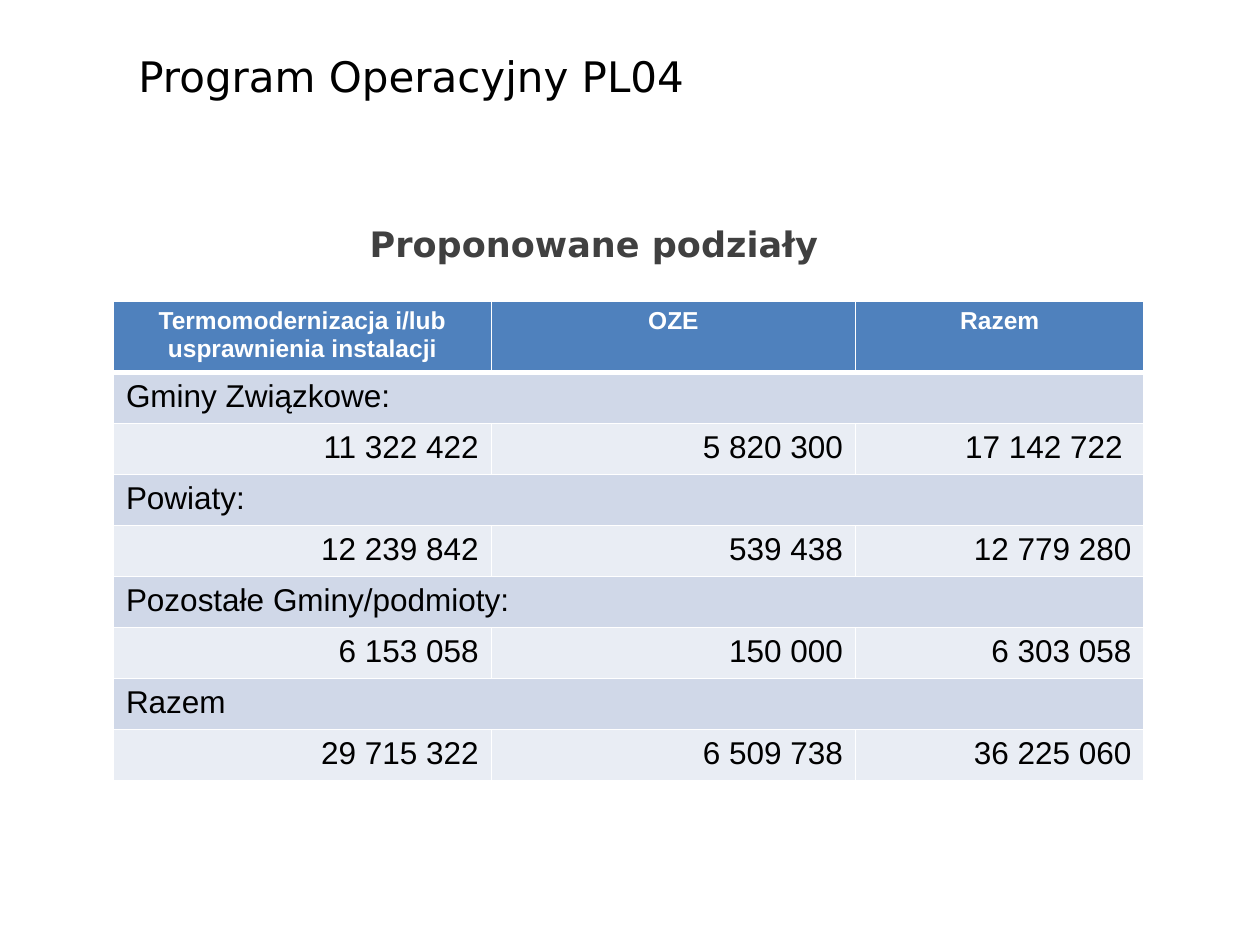
from lxml.etree import SubElement
from pptx import Presentation
from pptx.dml.color import RGBColor
from pptx.enum.text import PP_ALIGN as AL
from pptx.oxml.ns import qn
from pptx.util import Inches, Pt

W, H = 10, 7.5
HEAD, LABEL, VALUE = "4F81BD", "D0D8E8", "E9EDF4"
BLACK, GREY, WHITE = "000000", "404040", "FFFFFF"
COLS = [3, 2.89, 2.29]
HEAD_H, ROW_H = 0.56, 0.405
HEADERS = ["Termomodernizacja i/lub usprawnienia instalacji", "OZE", "Razem"]
GROUPS = [
    ("Gminy Związkowe:", ["11 322 422", "5 820 300", "17 142 722 "]),
    ("Powiaty:", ["12 239 842", "539 438", "12 779 280"]),
    ("Pozostałe Gminy/podmioty:", ["6 153 058", "150 000", "6 303 058"]),
    ("Razem", ["29 715 322", "6 509 738", "36 225 060"]),
]


def rgb(color):
    return RGBColor.from_string(color)


def write(tf, text, size, color, font="Arial", bold=False, align=AL.LEFT):
    p = tf.paragraphs[0]
    p.alignment = align
    r = p.add_run()
    r.text = text
    r.font.name, r.font.size, r.font.bold = font, Pt(size), bold
    r.font.color.rgb = rgb(color)
    return p


def add_heading(slide, box, text, size, color, **style):
    sp = slide.shapes.add_textbox(*map(Inches, box))
    sp.text_frame.word_wrap = True
    return write(sp.text_frame, text, size, color, font="DejaVu Sans", **style)


def add_title(slide, box):
    p = add_heading(slide, box, "Program Operacyjny PL04", 24, BLACK)
    # Hanging indent
    pPr = p._p.get_or_add_pPr()
    pPr.set("marL", str(Inches(0.38)))
    pPr.set("indent", str(-Inches(0.38)))


def set_borders(cell, bottom):
    tcPr = cell._tc.get_or_add_tcPr()
    for side, width in (("L", 1), ("R", 1), ("T", 1), ("B", bottom)):
        ln = SubElement(tcPr, qn(f"a:ln{side}"), w=str(Pt(width)))
        fill = SubElement(ln, qn("a:solidFill"))
        SubElement(fill, qn("a:srgbClr"), val=WHITE)


def style_cell(cell, fill, bottom=1):
    set_borders(cell, bottom)
    cell.fill.solid()
    cell.fill.fore_color.rgb = rgb(fill)


def add_split_table(slide, box):
    rows = 1 + 2 * len(GROUPS)
    table = slide.shapes.add_table(rows, len(COLS), *map(Inches, box)).table
    for col, width in zip(table.columns, COLS):
        col.width = Inches(width)
    for i, row in enumerate(table.rows):
        row.height = Inches(ROW_H if i else HEAD_H)

    # Header row
    for c, text in enumerate(HEADERS):
        cell = table.cell(0, c)
        style_cell(cell, HEAD, bottom=3)
        write(cell.text_frame, text, 14, WHITE, bold=True, align=AL.CENTER)

    # Each group: a merged label row, then its amounts
    for g, (label, amounts) in enumerate(GROUPS):
        top = 1 + 2 * g
        for c, amount in enumerate(amounts):
            style_cell(table.cell(top, c), LABEL)
            cell = table.cell(top + 1, c)
            style_cell(cell, VALUE)
            write(cell.text_frame, amount, 18, BLACK, align=AL.RIGHT)
        first = table.cell(top, 0)
        first.merge(table.cell(top, len(COLS) - 1))
        write(first.text_frame, label, 18, BLACK)


def main():
    prs = Presentation()
    prs.slide_width, prs.slide_height = Inches(W), Inches(H)
    slide = prs.slides.add_slide(prs.slide_layouts[6])
    add_heading(slide, (0.75, 1.72, 7.93, 0.77), "Proponowane podziały",
                20, GREY, bold=True, align=AL.CENTER)
    add_title(slide, (1, 0.35, 5.68, 0.5))
    table_h = HEAD_H + 2 * len(GROUPS) * ROW_H
    add_split_table(slide, (0.9, 2.39, sum(COLS), table_h))
    prs.save("out.pptx")


if __name__ == "__main__":
    main()
